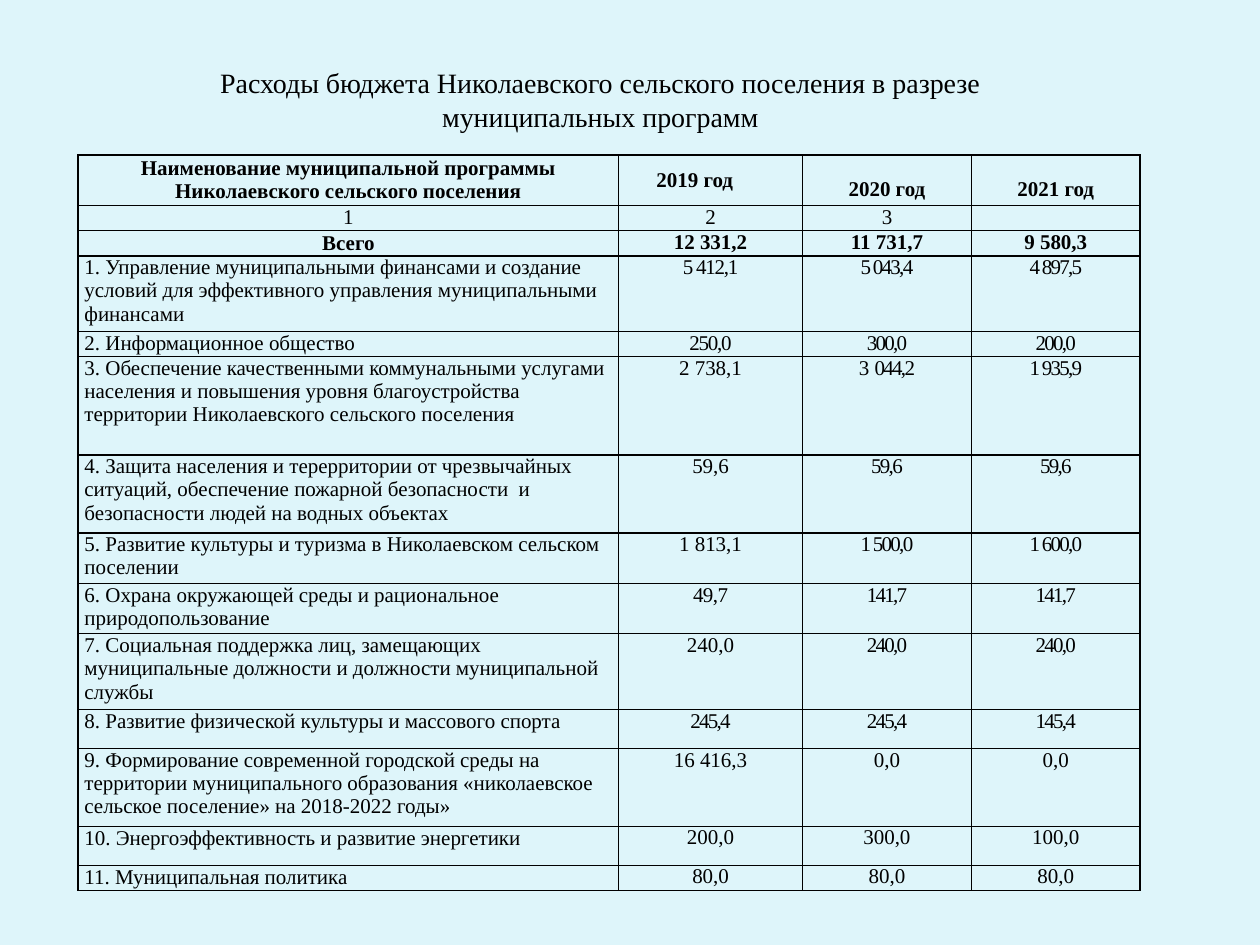
from dataclasses import dataclass

from lxml.etree import SubElement
from pptx import Presentation
from pptx.dml.color import RGBColor as Rgb
from pptx.enum.text import MSO_ANCHOR as Anchor, PP_ALIGN as Align
from pptx.oxml.ns import qn
from pptx.slide import Slide
from pptx.util import Inches, Pt

COLORS = {"background": "DEF5FA", "ink": "000000"}
TITLE = "Расходы бюджета Николаевского сельского поселения в разрезе муниципальных программ"
HEADER = ("Наименование муниципальной программы Николаевского сельского поселения",
          "2019 год", "2020 год", "2021 год")
NUMBERS = ("1", "2", "3", "")
TOTALS = ("Всего", "12 331,2", "11 731,7", "9 580,3")
PROGRAMS = [
    ("1. Управление муниципальными финансами и создание условий для эффективного управления "
     "муниципальными финансами", "5 412,1", "5 043,4", "4 897,5"),
    ("2. Информационное общество", "250,0", "300,0", "200,0"),
    ("3. Обеспечение качественными коммунальными услугами населения и повышения уровня "
     "благоустройства территории Николаевского сельского поселения",
     "2 738,1", "3  044,2", "1 935,9"),
    ("4. Защита населения и терерритории от чрезвычайных ситуаций, обеспечение пожарной "
     "безопасности  и безопасности людей на водных объектах", "59,6", "59,6", "59,6"),
    ("5. Развитие культуры и туризма в Николаевском сельском поселении",
     "1 813,1", "1 500,0", "1 600,0"),
    ("6. Охрана окружающей среды и рациональное природопользование", "49,7", "141,7", "141,7"),
    ("7. Социальная поддержка лиц, замещающих муниципальные должности и должности "
     "муниципальной службы", "240,0", "240,0", "240,0"),
    ("8. Развитие физической культуры и массового спорта", "245,4", "245,4", "145,4"),
    ("9. Формирование современной городской среды на территории муниципального образования "
     "«николаевское сельское поселение» на 2018-2022 годы»", "16 416,3", "0,0", "0,0"),
    ("10. Энергоэффективность и развитие энергетики", "200,0", "300,0", "100,0"),
    ("11. Муниципальная политика", "80,0", "80,0", "80,0"),
]
COLUMN_WIDTHS = (4.29, 1.46, 1.34, 1.34)
ROW_HEIGHTS = (0.4, 0.2, 0.2, 0.6, 0.2, 0.78, 0.62, 0.4, 0.4, 0.6, 0.31, 0.62, 0.31, 0.2)
FIRST_PROGRAM = 3
FIRST_YEAR_SPACING = {1: -70, 2: -70, 6: -30, 8: -100}
LAST_TIGHT_PROGRAM = 8
FIRST_LOOSE_LEADING = 10


@dataclass
class BudgetSlide:
    """Holds the style and the current slide and draws each kind of element."""

    slide: Slide
    font: str = "Times New Roman"
    title_size: int = 16
    table_size: int = 12

    def background(self):
        fill = self.slide.background.fill
        fill.solid()
        fill.fore_color.rgb = Rgb.from_string(COLORS["background"])

    def format(self, paragraph, size, bold=False, align=Align.CENTER):
        paragraph.alignment = align
        font = paragraph.font
        font.name, font.size, font.bold = self.font, Pt(size), bold
        font.color.rgb = Rgb.from_string(COLORS["ink"])

    def title(self, text, left, top, width, height):
        heading = self.slide.shapes.title
        heading.left, heading.top = Inches(left), Inches(top)
        heading.width, heading.height = Inches(width), Inches(height)
        frame = heading.text_frame
        frame.text = text
        frame.word_wrap = True
        frame.vertical_anchor = Anchor.TOP
        self.format(frame.paragraphs[0], self.title_size)

    def borders(self, cell):
        properties = cell._tc.get_or_add_tcPr()
        for position, side in enumerate(("lnL", "lnR", "lnT", "lnB")):
            line = SubElement(properties, qn(f"a:{side}"), w=str(Pt(1)))
            properties.remove(line)
            properties.insert(position, line)
            SubElement(SubElement(line, qn("a:solidFill")), qn("a:srgbClr"), val=COLORS["ink"])

    def cell(self, cell, text, bold=False, align=Align.CENTER, anchor=Anchor.TOP,
             spacing=0, leading=None):
        cell.fill.background()
        self.borders(cell)
        cell.margin_left = cell.margin_right = Inches(0.05)
        cell.margin_top = cell.margin_bottom = 0
        cell.vertical_anchor = anchor
        paragraph = cell.text_frame.paragraphs[0]
        self.format(paragraph, self.table_size, bold, align)
        if leading:
            paragraph.line_spacing = leading
        if not text:
            SubElement(paragraph._p, qn("a:endParaRPr"), sz=str(self.table_size * 100))
            return
        run = paragraph.add_run()
        run.text = text
        if spacing:
            run._r.get_or_add_rPr().set("spc", str(spacing))

    def table(self, left, top):
        table = self.slide.shapes.add_table(
            len(ROW_HEIGHTS), len(COLUMN_WIDTHS), Inches(left), Inches(top),
            Inches(sum(COLUMN_WIDTHS)), Inches(sum(ROW_HEIGHTS))).table
        table.first_row = table.horz_banding = False
        for column, width in zip(table.columns, COLUMN_WIDTHS):
            column.width = Inches(width)
        for row, height in zip(table.rows, ROW_HEIGHTS):
            row.height = Inches(height)
        self.heading_rows(table)
        for number, program in enumerate(PROGRAMS, 1):
            self.program_row(table, number, program)

    def heading_rows(self, table):
        header_anchors = (Anchor.MIDDLE, Anchor.MIDDLE, Anchor.BOTTOM, Anchor.BOTTOM)
        for column, anchor in enumerate(header_anchors):
            align = Align.LEFT if column == 1 else Align.CENTER
            self.cell(table.cell(0, column), HEADER[column], True, align, anchor)
            if anchor == Anchor.BOTTOM:
                table.cell(0, column).margin_bottom = Inches(0.03)
            self.cell(table.cell(1, column), NUMBERS[column])
            total_anchor = Anchor.TOP if column else Anchor.MIDDLE
            self.cell(table.cell(2, column), TOTALS[column], True, anchor=total_anchor)
        table.cell(0, 1).margin_left = Inches(0.3)

    def program_row(self, table, number, program):
        row = number + FIRST_PROGRAM - 1
        name, *amounts = program
        self.cell(table.cell(row, 0), name, align=Align.LEFT)
        later_spacing = -100 if number <= LAST_TIGHT_PROGRAM else 0
        spacings = (FIRST_YEAR_SPACING.get(number, 0), later_spacing, later_spacing)
        leading = 0.95 if number >= FIRST_LOOSE_LEADING else None
        for column, (amount, spacing) in enumerate(zip(amounts, spacings), 1):
            self.cell(table.cell(row, column), amount, spacing=spacing, leading=leading)


def main():
    deck = Presentation()
    deck.slide_width, deck.slide_height = Inches(10), Inches(7.5)
    budget = BudgetSlide(deck.slides.add_slide(deck.slide_layouts[5]))
    budget.background()
    budget.title(TITLE, 0.86, 0.47, 7.81, 0.64)
    budget.table(0.62, 1.23)
    deck.save("out.pptx")


if __name__ == "__main__":
    main()
